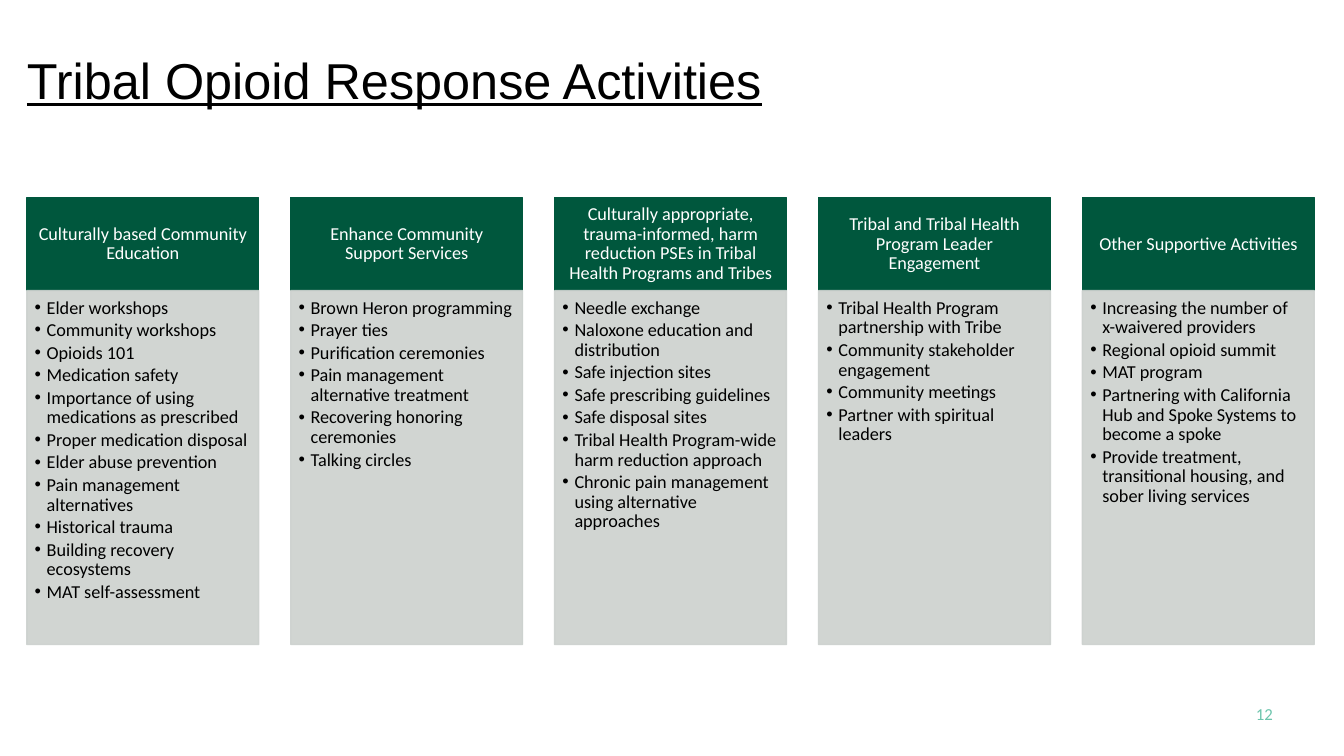
from lxml.etree import SubElement
from pptx import Presentation
from pptx.dml.color import RGBColor
from pptx.enum.shapes import MSO_SHAPE
from pptx.enum.text import MSO_ANCHOR, PP_ALIGN
from pptx.oxml.ns import qn
from pptx.util import Pt

TITLE = "Tribal Opioid Response Activities"
PAGE = "12"
ACTIVITIES = [
    ("Culturally based Community Education", [
        "Elder workshops",
        "Community workshops",
        "Opioids 101",
        "Medication safety",
        "Importance of using medications as prescribed",
        "Proper medication disposal",
        "Elder abuse prevention",
        "Pain management alternatives",
        "Historical trauma",
        "Building recovery ecosystems",
        "MAT self-assessment",
    ]),
    ("Enhance Community Support Services", [
        "Brown Heron programming",
        "Prayer ties",
        "Purification ceremonies",
        "Pain management alternative treatment",
        "Recovering honoring ceremonies",
        "Talking circles",
    ]),
    ("Culturally appropriate, trauma-informed, harm reduction PSEs in Tribal Health Programs and Tribes", [
        "Needle exchange",
        "Naloxone education and distribution",
        "Safe injection sites",
        "Safe prescribing guidelines",
        "Safe disposal sites",
        "Tribal Health Program-wide harm reduction approach",
        "Chronic pain management using alternative approaches",
    ]),
    ("Tribal and Tribal Health Program Leader Engagement", [
        "Tribal Health Program partnership with Tribe",
        "Community stakeholder engagement",
        "Community meetings",
        "Partner with spiritual leaders",
    ]),
    ("Other Supportive Activities", [
        "Increasing the number of x-waivered providers",
        "Regional opioid summit",
        "MAT program",
        "Partnering with California Hub and Spoke Systems to become a spoke",
        "Provide treatment, transitional housing, and sober living services",
    ]),
]

GREEN, GRAY, MINT, WHITE, BLACK = "00573D", "CCD1CE", "6CC4AC", "FFFFFF", "000000"
LEFT, TOP, WIDTH, PITCH = 19.2, 141.2, 165.6, 188.5
HEADING_HEIGHT, LIST_HEIGHT = 66.4, 252.8
BULLET_INDENT = 8.6


def color(value):
    return RGBColor.from_string(value)


def fill_text(shape, lines, size, font, ink, align=PP_ALIGN.LEFT,
              anchor=MSO_ANCHOR.MIDDLE, insets=(7.2, 3.6, 7.2, 3.6),
              spacing=None, bullets=False, underline=False):
    frame = shape.text_frame
    frame.word_wrap = True
    frame.vertical_anchor = anchor
    (frame.margin_left, frame.margin_top,
     frame.margin_right, frame.margin_bottom) = map(Pt, insets)
    for index, line in enumerate(lines):
        paragraph = frame.add_paragraph() if index else frame.paragraphs[0]
        paragraph.text = line
        paragraph.alignment = align
        paragraph.line_spacing = spacing
        if bullets:
            paragraph.space_after = Pt(2)
            properties = paragraph._p.get_or_add_pPr()
            properties.set("marL", str(Pt(BULLET_INDENT)))
            properties.set("indent", str(-Pt(BULLET_INDENT)))
            SubElement(properties, qn("a:buFont"), typeface="Arial")
            SubElement(properties, qn("a:buChar"), char="•")
        paragraph.font.size = Pt(size)
        paragraph.font.name = font
        paragraph.font.color.rgb = color(ink)
        if underline:
            paragraph.font.underline = True


def add_panel(slide, left, top, height, tint, opacity=None):
    panel = slide.shapes.add_shape(
        MSO_SHAPE.RECTANGLE, Pt(left), Pt(top), Pt(WIDTH), Pt(height))
    panel.shadow.inherit = False
    panel.fill.solid()
    panel.fill.fore_color.rgb = color(tint)
    panel.line.color.rgb = color(tint)
    panel.line.width = Pt(1)
    if opacity:
        for shade in panel._element.spPr.iter(qn("a:srgbClr")):
            SubElement(shade, qn("a:alpha"), val=str(opacity * 1000))
    return panel


def main():
    deck = Presentation()
    deck.slide_width, deck.slide_height = Pt(960), Pt(540)
    slide = deck.slides.add_slide(deck.slide_layouts[6])

    title = slide.shapes.add_textbox(Pt(12.2), Pt(29.5), Pt(908.6), Pt(54))
    fill_text(title, [TITLE], 36, "Arial", BLACK, underline=True)

    for column, (heading, items) in enumerate(ACTIVITIES):
        left = LEFT + column * PITCH
        heading_panel = add_panel(slide, left, TOP, HEADING_HEIGHT, GREEN)
        fill_text(heading_panel, [heading], 13, "Calibri", WHITE, PP_ALIGN.CENTER,
                  insets=(7.2, 4.2, 7.2, 4.2), spacing=0.9)
        items_panel = add_panel(slide, left, TOP + HEADING_HEIGHT, LIST_HEIGHT, GRAY, 90)
        fill_text(items_panel, items, 13, "Calibri", BLACK, anchor=MSO_ANCHOR.TOP,
                  insets=(5.6, 5.6, 7.2, 8), spacing=0.9, bullets=True)

    page = slide.shapes.add_textbox(Pt(876.2), Pt(504), Pt(54), Pt(12.2))
    fill_text(page, [PAGE], 12, "Calibri", MINT, PP_ALIGN.CENTER)

    deck.save("out.pptx")


if __name__ == "__main__":
    main()
